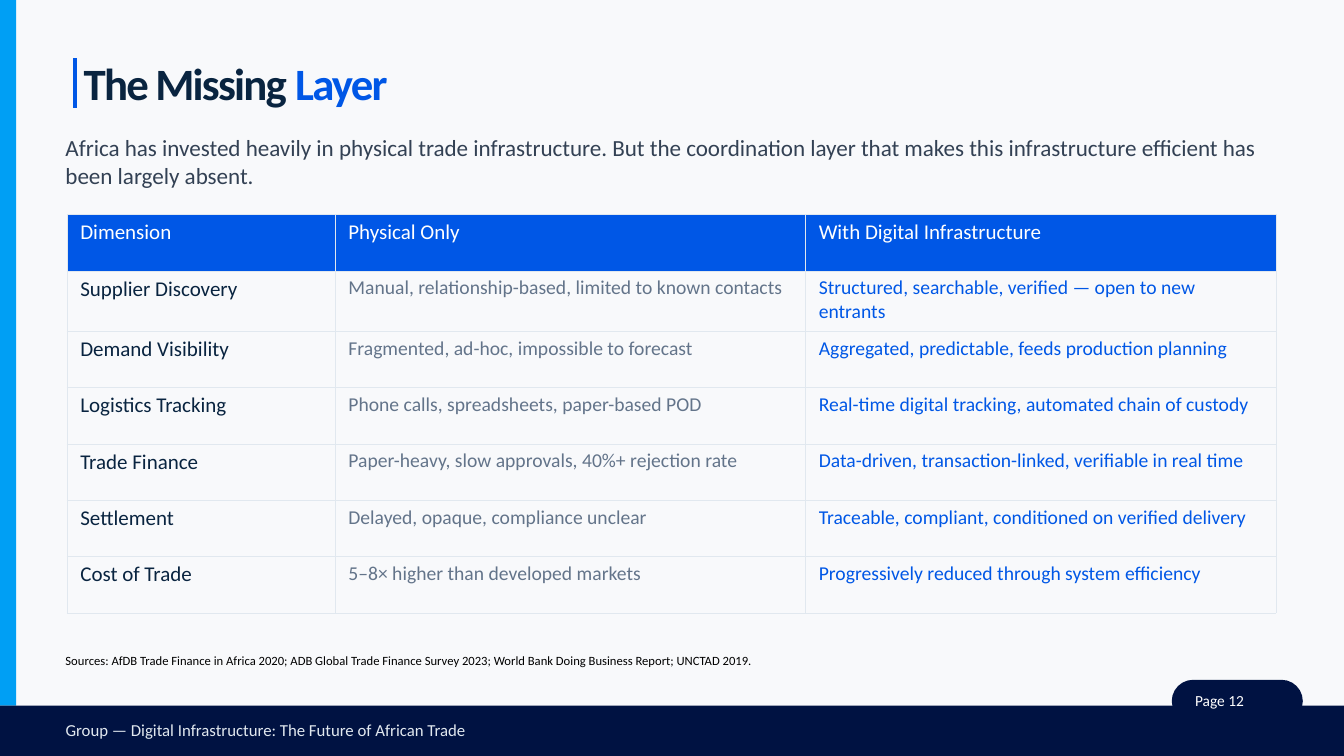
from lxml import etree
from pptx import Presentation
from pptx.dml.color import RGBColor
from pptx.enum.shapes import MSO_CONNECTOR, MSO_SHAPE
from pptx.enum.text import MSO_ANCHOR, MSO_AUTO_SIZE, PP_ALIGN
from pptx.oxml.ns import qn
from pptx.util import Pt

RECTANGLE, ROUNDED = MSO_SHAPE.RECTANGLE, MSO_SHAPE.ROUNDED_RECTANGLE
STRAIGHT = MSO_CONNECTOR.STRAIGHT
TOP, LEFT, NO_AUTOFIT = MSO_ANCHOR.TOP, PP_ALIGN.LEFT, MSO_AUTO_SIZE.NONE

PAPER = RGBColor(0xF8, 0xF9, 0xFB)
SKY = RGBColor(0x00, 0x9F, 0xF4)
NAVY = RGBColor(0x00, 0x12, 0x42)
BLUE = RGBColor(0x00, 0x57, 0xE6)
INK = RGBColor(0x09, 0x24, 0x40)
SLATE = RGBColor(0x33, 0x41, 0x54)
GRAY = RGBColor(0x63, 0x74, 0x8A)
MIST = RGBColor(0xE1, 0xE8, 0xEF)
WHITE = RGBColor(0xFF, 0xFF, 0xFF)
BLACK = RGBColor(0x00, 0x00, 0x00)

TITLE = [("The Missing ", INK), ("Layer", BLUE)]
# text, (left, top, width, height), size, color, line spacing
TEXTS = [
    ("Africa has invested heavily in physical trade infrastructure. But the coordination layer "
     "that makes this infrastructure efficient has been largely absent.",
     (46.8, 94.3, 864, 42), 16.5, SLATE, None),
    ("Sources: AfDB Trade Finance in Africa 2020; ADB Global Trade Finance Survey 2023; "
     "World Bank Doing Business Report; UNCTAD 2019.",
     (46.8, 465.2, 520, 13), 9, BLACK, None),
    ("Page 12", (853.6, 495.4, 48, 13), 11, WHITE, 11.5),
    ("Group — Digital Infrastructure: The Future of African Trade",
     (46.8, 516.2, 320, 14), 12, MIST, 12.4),
]
ROWS = [
    ("Dimension", "Physical Only", "With Digital Infrastructure"),
    ("Supplier Discovery", "Manual, relationship-based, limited to known contacts",
     "Structured, searchable, verified — open to new entrants"),
    ("Demand Visibility", "Fragmented, ad-hoc, impossible to forecast",
     "Aggregated, predictable, feeds production planning"),
    ("Logistics Tracking", "Phone calls, spreadsheets, paper-based POD",
     "Real-time digital tracking, automated chain of custody"),
    ("Trade Finance", "Paper-heavy, slow approvals, 40%+ rejection rate",
     "Data-driven, transaction-linked, verifiable in real time"),
    ("Settlement", "Delayed, opaque, compliance unclear",
     "Traceable, compliant, conditioned on verified delivery"),
    ("Cost of Trade", "5–8× higher than developed markets",
     "Progressively reduced through system efficiency"),
]
COLUMN_WIDTHS = (191.5, 336, 336)
ROW_HEIGHTS = (40.3, 43) + (40.3,) * 5
COLUMN_FONTS = ((15, INK), (14, GRAY), (14, BLUE))
HEADER_FONT = (15, WHITE)
TABLE_LEFT, TABLE_TOP = 48, 153.2
SIDEBAR = (0, 0, 11.5, 504)
FOOTER = (0, 504, 960, 36)
PAGE_TAB = (837, 485.6, 93.6, 30.4)
TITLE_BOX = (59.8, 34.6, 839.5, 46.8)
TITLE_RULE = (53.3, 41.6, 53.3, 77)


def points(values):
    return [Pt(value) for value in values]


def assign(target, values):
    for name, value in values.items():
        setattr(target, name, value)


def add_run(paragraph, text, size, color, bold=False):
    run = paragraph.add_run()
    run.text = text
    assign(run.font, {"name": "Calibri", "size": Pt(size), "bold": bold})
    run.font.color.rgb = color
    return run


def prepare_frame(frame, top_margin):
    assign(frame, {"margin_left": 0, "margin_top": Pt(top_margin), "margin_right": 0,
                   "margin_bottom": 0, "word_wrap": True, "vertical_anchor": TOP,
                   "auto_size": NO_AUTOFIT})
    return frame.paragraphs[0]


def add_block(slide, kind, box, color):
    shape = slide.shapes.add_shape(kind, *points(box))
    shape.shadow.inherit = False
    shape.fill.solid()
    shape.fill.fore_color.rgb = color
    shape.line.fill.background()
    return shape


def add_borders(cell):
    properties = cell._tc.get_or_add_tcPr()
    for side in ("lnL", "lnR", "lnT", "lnB"):
        line = etree.SubElement(properties, qn(f"a:{side}"), w=str(Pt(0.5)))
        fill = etree.SubElement(line, qn("a:solidFill"))
        etree.SubElement(fill, qn("a:srgbClr"), val=str(MIST))


def add_title(slide):
    title = slide.shapes.title
    assign(title, dict(zip(("left", "top", "width", "height"), points(TITLE_BOX))))
    paragraph = prepare_frame(title.text_frame, 5)
    paragraph.alignment = LEFT
    for text, color in TITLE:
        run = add_run(paragraph, text, 32, color, bold=True)
        run.font._element.set("spc", "-130")
    rule = slide.shapes.add_connector(STRAIGHT, *points(TITLE_RULE))
    rule.line.color.rgb = BLUE
    rule.line.width = Pt(3)
    etree.SubElement(rule._element.spPr, qn("a:effectLst"))


def add_comparison(slide):
    size = points((sum(COLUMN_WIDTHS), sum(ROW_HEIGHTS)))
    table = slide.shapes.add_table(len(ROWS), len(COLUMN_WIDTHS),
                                   *points((TABLE_LEFT, TABLE_TOP)), *size).table
    for column, width in zip(table.columns, COLUMN_WIDTHS):
        column.width = Pt(width)
    for row, height in zip(table.rows, ROW_HEIGHTS):
        row.height = Pt(height)
    for row_index, texts in enumerate(ROWS):
        for column_index, text in enumerate(texts):
            is_header = row_index == 0
            cell = table.cell(row_index, column_index)
            assign(cell, {"margin_left": Pt(9.4), "margin_right": Pt(15),
                          "margin_top": Pt(3.8), "margin_bottom": 0, "vertical_anchor": TOP})
            add_borders(cell)
            cell.fill.solid()
            cell.fill.fore_color.rgb = BLUE if is_header else PAPER
            font = HEADER_FONT if is_header else COLUMN_FONTS[column_index]
            add_run(cell.text_frame.paragraphs[0], text, *font)


def main():
    presentation = Presentation()
    assign(presentation, {"slide_width": Pt(960), "slide_height": Pt(540)})
    slide = presentation.slides.add_slide(presentation.slide_layouts[5])
    slide.background.fill.solid()
    slide.background.fill.fore_color.rgb = PAPER
    add_block(slide, RECTANGLE, SIDEBAR, SKY)
    add_block(slide, RECTANGLE, FOOTER, NAVY)
    add_block(slide, ROUNDED, PAGE_TAB, NAVY).adjustments[0] = 0.5
    add_title(slide)
    add_comparison(slide)
    for text, box, size, color, spacing in TEXTS:
        frame = slide.shapes.add_textbox(*points(box)).text_frame
        paragraph = prepare_frame(frame, 0 if spacing else 1)
        if spacing:
            paragraph.line_spacing = Pt(spacing)
        add_run(paragraph, text, size, color)
    presentation.save("out.pptx")


if __name__ == "__main__":
    main()
